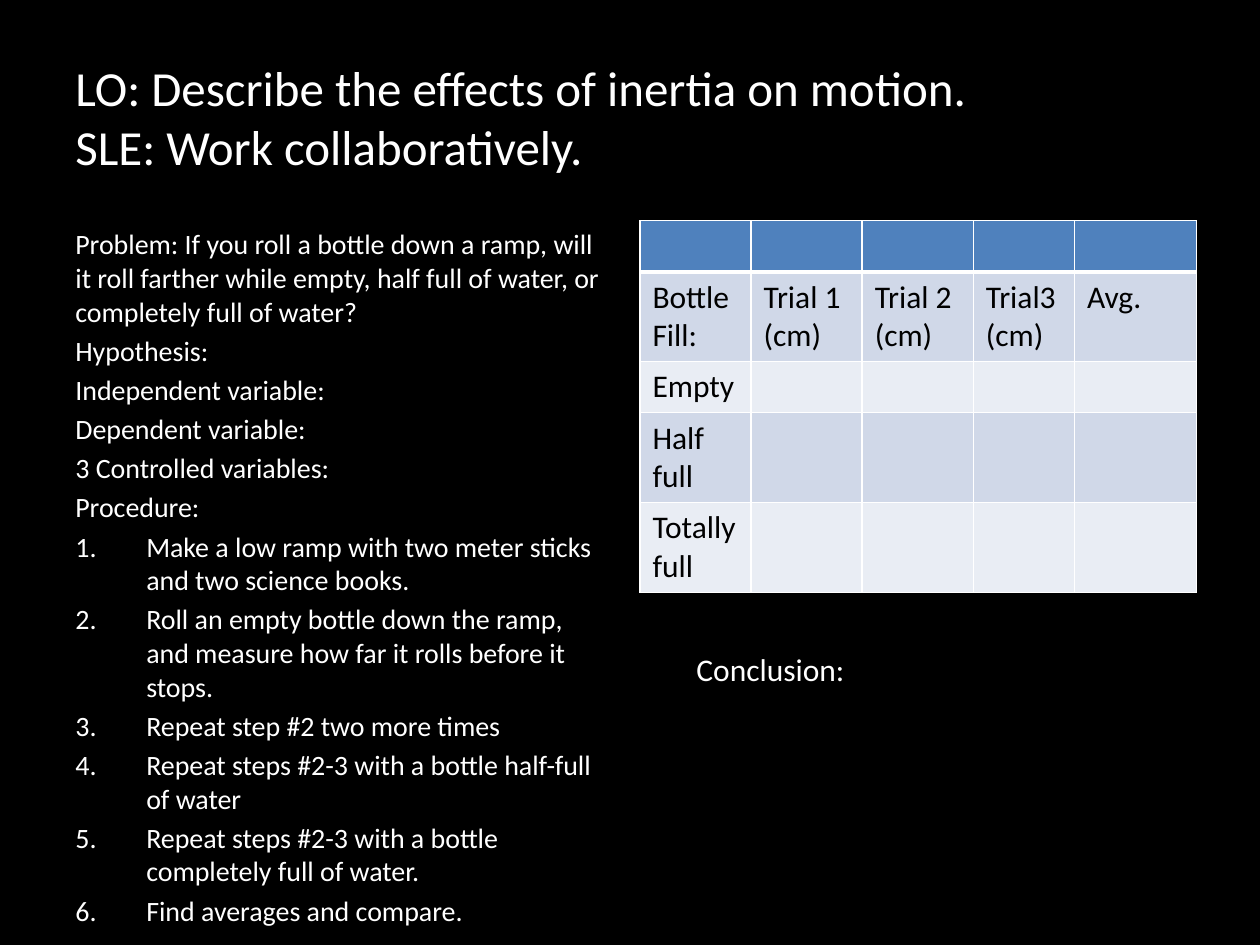
from lxml import etree
from pptx import Presentation
from pptx.dml.color import RGBColor
from pptx.enum.text import MSO_ANCHOR
from pptx.oxml.ns import qn
from pptx.util import Cm, Pt

MIDDLE = MSO_ANCHOR.MIDDLE
WHITE, BLACK = "FFFFFF", "000000"
HEADER, BAND_DARK, BAND_LIGHT = "4F81BD", "D0D8E8", "E9EDF4"


def color(value):
    return RGBColor.from_string(value)


def format_runs(paragraph, size, value):
    for run in paragraph.runs:
        run.font.name = "Calibri"
        run.font.size = Pt(size)
        run.font.color.rgb = color(value)


presentation = Presentation()
presentation.slide_width = Cm(25.4)
presentation.slide_height = Cm(19.05)
slide = presentation.slides.add_slide(presentation.slide_layouts[6])
slide.background.fill.solid()
slide.background.fill.fore_color.rgb = color(BLACK)

title = slide.shapes.add_textbox(Cm(1.27), Cm(0.76), Cm(22.86), Cm(3.18))
title.text_frame.word_wrap = True
title.text_frame.vertical_anchor = MIDDLE
title.text_frame.text = "LO: Describe the effects of inertia on motion.\vSLE: Work collaboratively."
format_runs(title.text_frame.paragraphs[0], 28, WHITE)

headings = [
    "Problem: If you roll a bottle down a ramp, will it roll farther while empty, "
    "half full of water, or completely full of water?",
    "Hypothesis:",
    "Independent variable:",
    "Dependent variable:",
    "3 Controlled variables:",
    "Procedure:",
]
steps = [
    "Make a low ramp with two meter sticks and two science books.",
    "Roll an empty bottle down the ramp, and measure how far it rolls before it stops.",
    "Repeat step #2 two more times",
    "Repeat steps #2-3 with a bottle half-full of water",
    "Repeat steps #2-3 with a bottle completely full of water.",
    "Find averages and compare.",
]
body = slide.shapes.add_textbox(Cm(1.27), Cm(4.45), Cm(11.22), Cm(12.57))
body.text_frame.word_wrap = True
body.text_frame.text = "\n".join(headings + steps)
for index, paragraph in enumerate(body.text_frame.paragraphs):
    paragraph.space_before = Pt(3.2)
    format_runs(paragraph, 16, WHITE)
    if index >= len(headings):
        properties = paragraph._p.get_or_add_pPr()
        properties.set("marL", str(Cm(1.43)))
        properties.set("indent", str(-Cm(1.43)))
        etree.SubElement(properties, qn("a:buFont"), typeface="+mj-lt")
        etree.SubElement(properties, qn("a:buAutoNum"), type="arabicPeriod")

rows = [
    [""] * 5,
    ["Bottle Fill:", "Trial 1 (cm)", "Trial 2 (cm)", "Trial3 (cm)", "Avg."],
    ["Empty"] + [""] * 4,
    ["Half full"] + [""] * 4,
    ["Totally full"] + [""] * 4,
]
row_heights = [1.03, 1.81, 1.03, 1.81, 1.81]
column_widths = [2.24, 2.24, 2.24, 2.04, 2.46]
row_fills = [HEADER, BAND_DARK, BAND_LIGHT, BAND_DARK, BAND_LIGHT]
table = slide.shapes.add_table(
    len(rows), len(column_widths), Cm(12.9), Cm(4.45), Cm(sum(column_widths)), Cm(sum(row_heights))
).table
for column, width in zip(table.columns, column_widths):
    column.width = Cm(width)
for row_index, texts in enumerate(rows):
    table.rows[row_index].height = Cm(row_heights[row_index])
    for column_index, text in enumerate(texts):
        cell = table.cell(row_index, column_index)
        cell.text = text
        format_runs(cell.text_frame.paragraphs[0], 18, BLACK)
        properties = cell._tc.get_or_add_tcPr()
        for side in ("L", "R", "T", "B"):
            below_header = (row_index, side) in ((0, "B"), (1, "T"))
            border = etree.SubElement(
                properties, qn(f"a:ln{side}"), w=str(Pt(3 if below_header else 1))
            )
            border_fill = etree.SubElement(border, qn("a:solidFill"))
            etree.SubElement(border_fill, qn("a:srgbClr"), val=WHITE)
        cell.fill.solid()
        cell.fill.fore_color.rgb = color(row_fills[row_index])

conclusion = slide.shapes.add_textbox(Cm(13.79), Cm(12.98), Cm(3.53), Cm(1.02))
conclusion.text_frame.word_wrap = False
conclusion.text_frame.text = "Conclusion:"
format_runs(conclusion.text_frame.paragraphs[0], 18, WHITE)

presentation.save("out.pptx")
